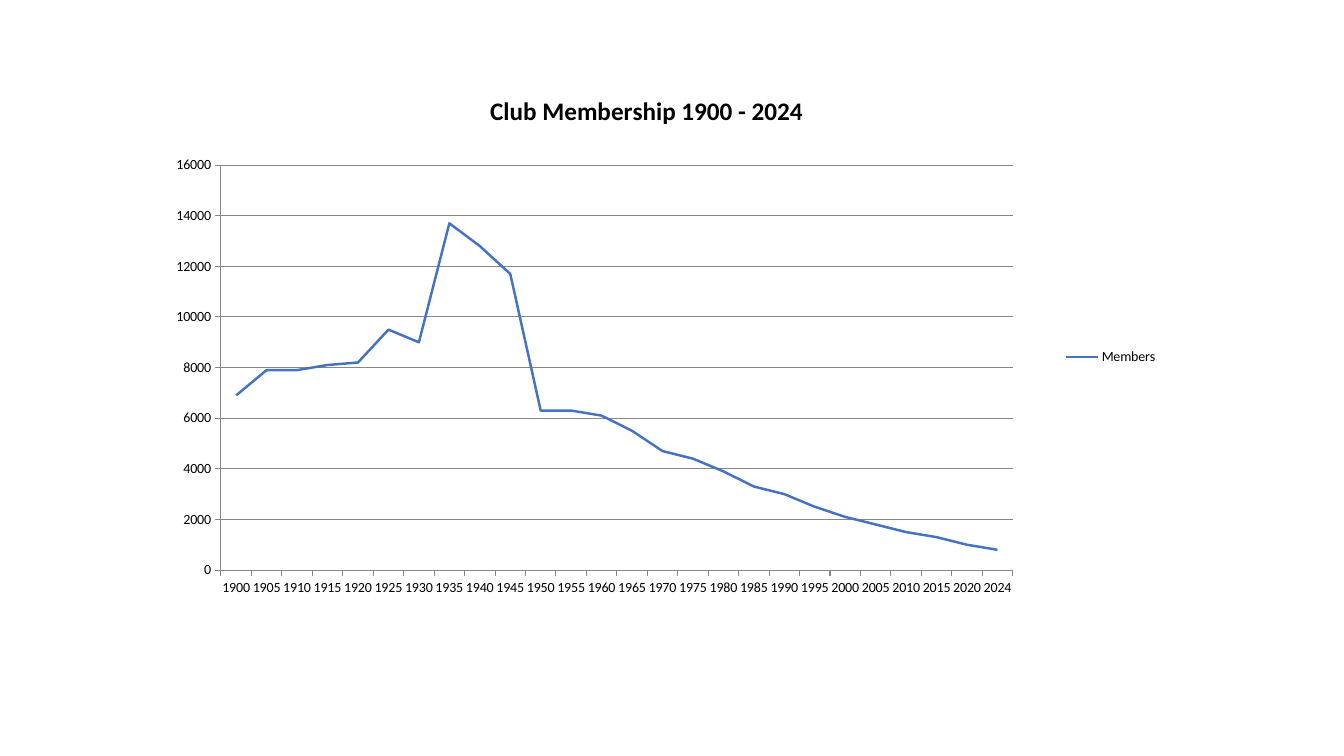
import lxml.etree
import pptx
import pptx.chart.data
import pptx.dml.color
import pptx.enum.chart
import pptx.oxml.ns
import pptx.util

Pt = pptx.util.Pt
BLACK = pptx.dml.color.RGBColor(0x00, 0x00, 0x00)
GREY = pptx.dml.color.RGBColor(0x87, 0x87, 0x87)
BLUE = pptx.dml.color.RGBColor(0x44, 0x72, 0xC4)
FONT = "Calibri"

YEARS = [*range(1900, 2021, 5), 2024]
MEMBERS = [
    6900, 7900, 7900, 8100, 8200, 9500, 9000, 13700, 12800, 11700, 6300, 6300, 6100,
    5500, 4700, 4400, 3900, 3300, 3000, 2500, 2100, 1800, 1500, 1300, 1000, 800,
]


def style_font(font, size, bold=False):
    font.name = FONT
    font.size = Pt(size)
    font.bold = bold
    font.color.rgb = BLACK


def style_line(line, color, width):
    line.color.rgb = color
    line.width = Pt(width)


def add_title(chart, text):
    chart.has_title = True
    chart.chart_title.include_in_layout = False
    span = chart.chart_title.text_frame.paragraphs[0].add_run()
    span.text = text
    style_font(span.font, 18, bold=True)


def style_axes(chart):
    for axis in (chart.category_axis, chart.value_axis):
        axis.major_tick_mark = pptx.enum.chart.XL_TICK_MARK.OUTSIDE
        axis.minor_tick_mark = pptx.enum.chart.XL_TICK_MARK.NONE
        style_line(axis.format.line, GREY, 0.75)
        style_font(axis.tick_labels.font, 10)
    scale = chart.value_axis
    scale.minimum_scale, scale.maximum_scale, scale.major_unit = 0, 16000, 2000
    scale.has_major_gridlines = True
    style_line(scale.major_gridlines.format.line, GREY, 0.75)


def add_legend(chart):
    chart.has_legend = True
    chart.legend.position = pptx.enum.chart.XL_LEGEND_POSITION.RIGHT
    chart.legend.include_in_layout = False
    style_font(chart.legend.font, 10)


def place_plot(chart, left, top, width, height):
    """Fix the inner plot area, in fractions of the chart frame."""
    qn = pptx.oxml.ns.qn
    area = chart.plots[0]._element.getparent()
    for old in area.findall(qn("c:layout")):
        area.remove(old)
    layout = lxml.etree.Element(qn("c:layout"))
    area.insert(0, layout)
    manual = lxml.etree.SubElement(layout, qn("c:manualLayout"))
    settings = {
        "layoutTarget": "inner", "xMode": "edge", "yMode": "edge",
        "x": left, "y": top, "w": width, "h": height,
    }
    for name, value in settings.items():
        lxml.etree.SubElement(manual, qn(f"c:{name}"), val=str(value))


def add_membership_chart(page):
    data = pptx.chart.data.CategoryChartData()
    data.categories = [str(year) for year in YEARS]
    data.add_series("Members", MEMBERS)
    chart = page.shapes.add_chart(
        pptx.enum.chart.XL_CHART_TYPE.LINE_STACKED,
        Pt(89.3), Pt(51.1), Pt(745.2), Pt(407.5), data,
    ).chart
    style_font(chart.font, 10)
    add_title(chart, "Club Membership 1900 - 2024")
    style_axes(chart)
    add_legend(chart)
    place_plot(chart, 0.092, 0.164, 0.759, 0.71)
    plot = chart.plots[0]
    plot.vary_by_categories = False
    members = plot.series[0]
    members.smooth = False
    members.marker.style = pptx.enum.chart.XL_MARKER_STYLE.NONE
    style_line(members.format.line, BLUE, 1.75)


def main():
    deck = pptx.Presentation()
    deck.slide_width, deck.slide_height = Pt(960), Pt(540)
    page = deck.slides.add_slide(deck.slide_layouts.get_by_name("Blank"))
    add_membership_chart(page)
    deck.save("out.pptx")


if __name__ == "__main__":
    main()
